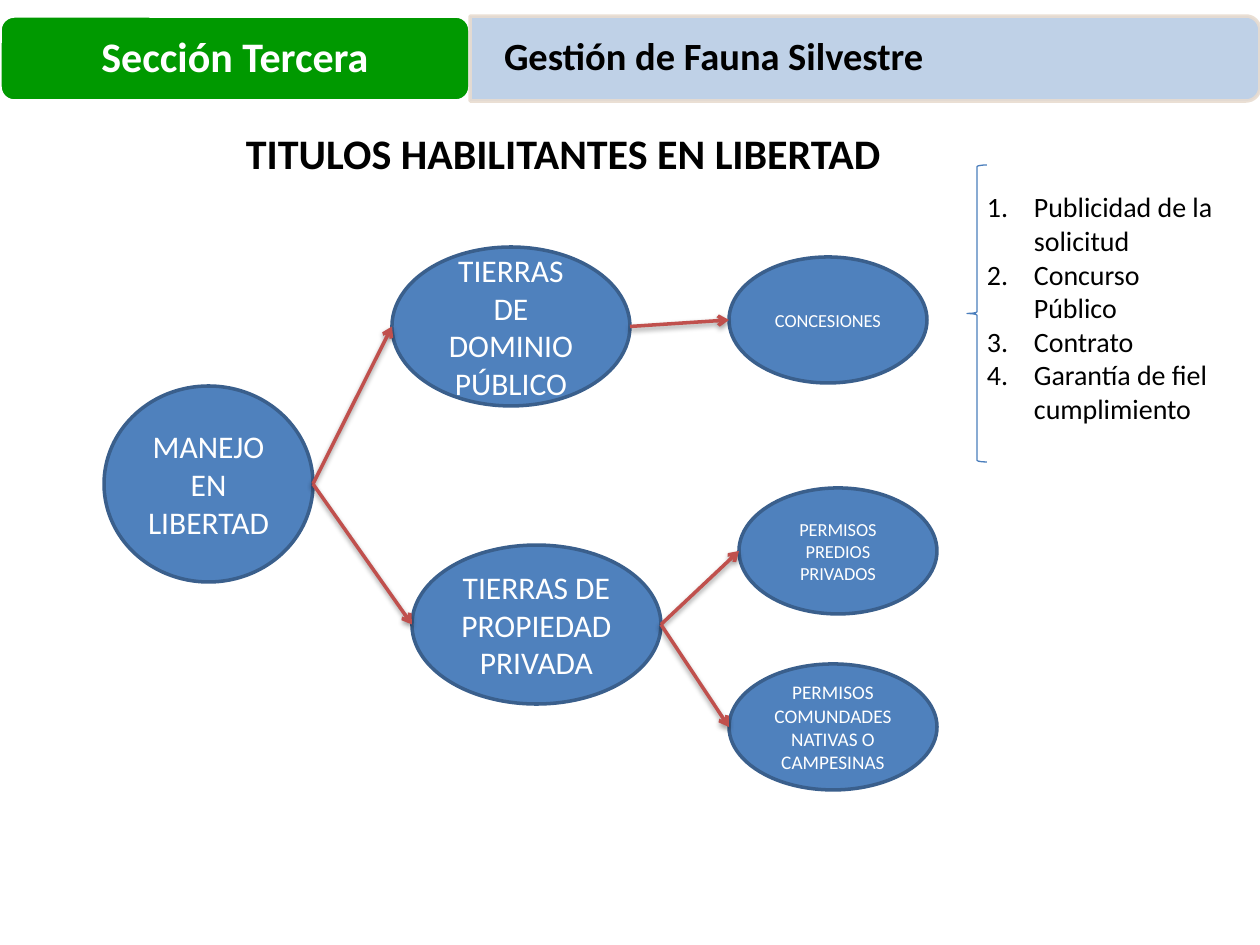
from math import cos, pi, sin

from lxml import etree
from pptx import Presentation
from pptx.dml.color import RGBColor
from pptx.enum.shapes import MSO_CONNECTOR, MSO_SHAPE
from pptx.enum.text import MSO_ANCHOR, PP_ALIGN
from pptx.oxml.ns import qn
from pptx.util import Pt

SCALE = 914400 / 126
FONT = "Calibri"
OVAL, ROUND, BRACE = MSO_SHAPE.OVAL, MSO_SHAPE.ROUNDED_RECTANGLE, MSO_SHAPE.LEFT_BRACE
LINE = MSO_CONNECTOR.STRAIGHT
MID, TOP = MSO_ANCHOR.MIDDLE, MSO_ANCHOR.TOP
LEFT, CENTER = PP_ALIGN.LEFT, PP_ALIGN.CENTER
COLORS = {
    "white": "FFFFFF", "black": "000000", "green": "009900", "pale": "B9CDE5",
    "sand": "E8DCD0", "blue": "4F81BD", "edge": "3A5F8C", "brace": "4B7EBC",
    "red": "C0504D",
}


def px(*nums):
    return [round(n * SCALE) for n in nums]


def rgb(name):
    return RGBColor.from_string(COLORS[name])


def add(node, tag, **attrs):
    return etree.SubElement(node, qn(tag), {k: str(v) for k, v in attrs.items()})


def paint(shape, fill, line, width=2, alpha=None):
    """Set fill and outline; alpha is a percentage for both."""
    shape.shadow.inherit = False
    if fill:
        shape.fill.solid()
        shape.fill.fore_color.rgb = rgb(fill)
    else:
        shape.fill.background()
    shape.line.color.rgb = rgb(line)
    shape.line.width = Pt(width)
    if alpha:
        for tint in shape._element.spPr.iter(qn("a:srgbClr")):
            add(tint, "a:alpha", val=alpha * 1000)


def write(shape, text, size, color="black", bold=False, align=LEFT, anchor=TOP,
          inset=(13, 6, 13, 6), space=None, indent=0):
    """Write one paragraph a line; an indent in px makes a numbered list."""
    frame = shape.text_frame
    frame.word_wrap = True
    frame.vertical_anchor = anchor
    (frame.margin_left, frame.margin_top,
     frame.margin_right, frame.margin_bottom) = px(*inset)
    for i, line in enumerate(text.split("\n")):
        para = frame.add_paragraph() if i else frame.paragraphs[0]
        para.alignment = align
        if space:
            para.line_spacing = space
        if indent:
            props = para._p.get_or_add_pPr()
            hang, = px(indent)
            props.set("marL", str(hang))
            props.set("indent", str(-hang))
            add(props, "a:buFont", typeface="+mj-lt")
            add(props, "a:buAutoNum", type="arabicPeriod")
        run = para.add_run()
        run.text = line
        run.font.name, run.font.size, run.font.bold = FONT, Pt(size), bold
        run.font.color.rgb = rgb(color)


def tab(slide, x, y, w, h, r):
    """Draw a bar whose right corners alone are round."""
    arcs = [(x + w - r + r * cos(a), cy + r * sin(a))
            for cy, start in ((y + r, -pi / 2), (y + h - r, 0))
            for a in (start + k * pi / 16 for k in range(9))]
    path = slide.shapes.build_freeform(*px(x, y))
    path.add_line_segments([px(*p) for p in arcs + [(x, y + h)]], close=True)
    return path.convert_to_shape()


def header(slide, x, y, w, h):
    split = 470
    label = slide.shapes.add_shape(ROUND, *px(x, y, split, h))
    paint(label, "green", "white")
    write(label, "Sección Tercera", 24, "white", True, CENTER, MID,
          (16, 10, 16, 10), 0.9)
    topic = tab(slide, x + split, y, w - split, h, 14)
    paint(topic, "pale", "sand", alpha=90)
    write(topic, "Gestión de Fauna Silvestre", 22, bold=True, anchor=MID,
          inset=(34, 20, 38, 20), space=0.9)


def title(slide, x, y, w, h):
    box = slide.shapes.add_textbox(*px(x, y, w, h))
    write(box, "TITULOS HABILITANTES EN LIBERTAD", 24, bold=True)


def arrow(slide, start, end):
    link = slide.shapes.add_connector(LINE, *px(*start, *end))
    link.line.color.rgb = rgb("red")
    link.line.width = Pt(2)
    add(link.line._get_or_add_ln(), "a:tailEnd", type="arrow")
    glow = add(link._element.spPr, "a:effectLst")
    shade = add(glow, "a:outerShdw", blurRad=Pt(3.1), dist=Pt(1.6),
                dir=5400000, rotWithShape=0)
    add(add(shade, "a:srgbClr", val=COLORS["black"]), "a:alpha", val=38000)


def tree(slide, x, y):
    nodes = {
        "root": ("MANEJO EN LIBERTAD", 18, 0, 139, 209, 196),
        "public": ("TIERRAS DE DOMINIO PÚBLICO", 18, 288, 0, 238, 159),
        "grant": ("CONCESIONES", 10.5, 625, 10, 198, 126),
        "private": ("TIERRAS DE PROPIEDAD PRIVADA", 18, 308, 298, 249, 159),
        "estate": ("PERMISOS PREDIOS PRIVADOS", 10.5, 635, 241, 198, 126),
        "native": ("PERMISOS COMUNDADES NATIVAS O CAMPESINAS", 11,
                   625, 417, 208, 126),
    }
    links = [("root", "public"), ("root", "private"), ("public", "grant"),
             ("private", "estate"), ("private", "native")]
    ends = {}
    for name, (text, size, dx, dy, w, h) in nodes.items():
        left, top = x + dx, y + dy
        oval = slide.shapes.add_shape(OVAL, *px(left, top, w, h))
        paint(oval, "blue", "edge")
        write(oval, text, size, "white", align=CENTER, anchor=MID,
              inset=(11, 6, 11, 6))
        mid = top + h / 2
        ends[name] = (left, mid), (left + w, mid)
    for start, end in links:
        arrow(slide, ends[start][1], ends[end][0])


def needs(slide, x, y, w, h):
    brace = slide.shapes.add_shape(BRACE, *px(x, y, 20, h))
    paint(brace, None, "brace", 0.75)
    box = slide.shapes.add_textbox(*px(x + 7, y + 19, w - 7, 251))
    write(box, "Publicidad de la solicitud\nConcurso Público\nContrato\n"
          "Garantía de fiel cumplimiento", 16, indent=47)


def main():
    deck = Presentation()
    deck.slide_width, deck.slide_height = px(1260, 945)
    slide = deck.slides.add_slide(deck.slide_layouts[6])
    tree(slide, 104, 247)
    title(slide, 233, 122, 794, 63)
    needs(slide, 967, 165, 260, 297)
    header(slide, 0, 16, 1260, 85)
    deck.save("out.pptx")


if __name__ == "__main__":
    main()
